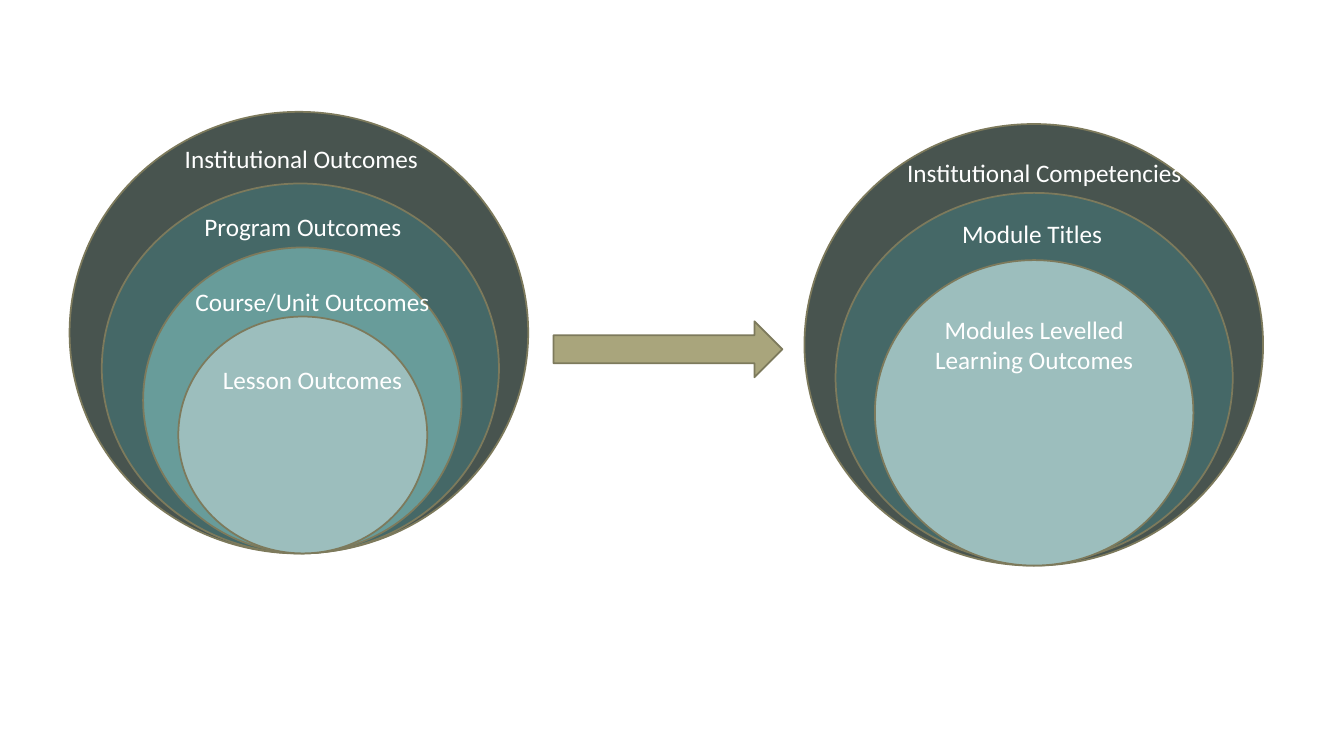
from dataclasses import dataclass

from pptx import Presentation
from pptx.dml.color import RGBColor
from pptx.enum.shapes import MSO_SHAPE
from pptx.enum.text import MSO_AUTO_SIZE, PP_ALIGN
from pptx.util import Pt

OVAL, ARROW = MSO_SHAPE.OVAL, MSO_SHAPE.RIGHT_ARROW
CENTER = PP_ALIGN.CENTER
FIT_SHAPE = MSO_AUTO_SIZE.SHAPE_TO_FIT_TEXT
BLANK_LAYOUT = 6


@dataclass(frozen=True)
class Theme:
    outer: str = "48544F"
    second: str = "456867"
    third: str = "689C9A"
    inner: str = "9CBEBD"
    arrow: str = "A9A57C"
    outline: str = "7D7A5C"
    text: str = "FFFFFF"
    font: str = "Calibri"
    label_size: float = 18
    line_width: float = 1.25


THEME = Theme()

# Ring sizes: width, height
OUTER, SECOND, THIRD, INNER = (327.6, 315.4), (283.7, 264.2), (227.5, 218.2), (177.8, 169.2)

# Rings: size, fill, centre x, bottom
OUTCOME_RINGS = [
    (OUTER, THEME.outer, 213.5, 395.3),
    (SECOND, THEME.second, 214.6, 395.3),
    (THIRD, THEME.third, 216, 395),
    (INNER, THEME.inner, 216.3, 395.3),
]
COMPETENCY_RINGS = [
    (OUTER, THEME.outer, 738.4, 404),
    (SECOND, THEME.second, 738.7, 402),
    (THIRD, THEME.inner, 738.7, 404),
]

# Labels: text, centre x, top, width, height
LABELS = [
    ("Institutional Outcomes", 215.3, 98.6, 216, 29),
    ("Program Outcomes", 216.4, 147.6, 216, 29),
    ("Course/Unit Outcomes", 223.2, 200.9, 216, 29),
    ("Lesson Outcomes", 223.2, 257, 216, 29),
    ("Institutional Competencies", 746, 108.7, 216, 29),
    ("Module Titles", 737.3, 152.6, 216, 29),
    ("Modules Levelled Learning Outcomes", 738.7, 221, 177, 51),
]


def add_outlined_shape(s, kind, left, top, width, height, fill):
    sp = s.shapes.add_shape(kind, Pt(left), Pt(top), Pt(width), Pt(height))
    sp.shadow.inherit = False
    sp.fill.solid()
    sp.fill.fore_color.rgb = RGBColor.from_string(fill)
    sp.line.color.rgb = RGBColor.from_string(THEME.outline)
    sp.line.width = Pt(THEME.line_width)


def add_rings(s, rings):
    """Draw nested ovals, outermost first, each standing on its bottom edge."""
    for (width, height), fill, center, bottom in rings:
        add_outlined_shape(s, OVAL, center - width / 2, bottom - height, width, height, fill)


def add_label(s, text, center, top, width, height):
    box = s.shapes.add_textbox(Pt(center - width / 2), Pt(top), Pt(width), Pt(height))
    tf = box.text_frame
    tf.word_wrap = True
    tf.auto_size = FIT_SHAPE
    p = tf.paragraphs[0]
    p.text = text
    p.alignment = CENTER
    p.font.name = THEME.font
    p.font.size = Pt(THEME.label_size)
    p.font.color.rgb = RGBColor.from_string(THEME.text)


def main():
    prs = Presentation()
    prs.slide_width, prs.slide_height = Pt(960), Pt(540)
    s = prs.slides.add_slide(prs.slide_layouts[BLANK_LAYOUT])
    add_rings(s, OUTCOME_RINGS)
    add_outlined_shape(s, ARROW, 395.3, 229.5, 163.6, 40, THEME.arrow)
    add_rings(s, COMPETENCY_RINGS)
    for label in LABELS:
        add_label(s, *label)
    prs.save("out.pptx")


if __name__ == "__main__":
    main()
